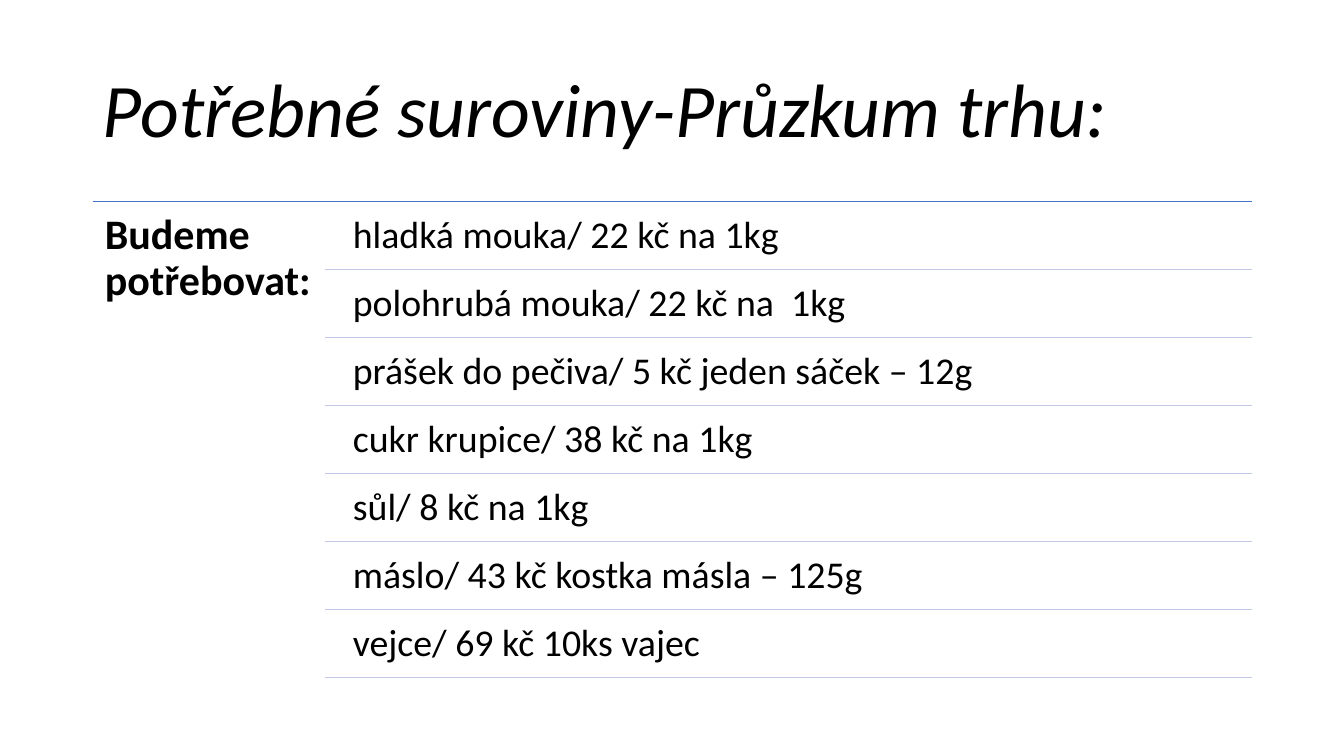
import pptx
import pptx.dml.color
import pptx.enum.shapes
import pptx.enum.text
import pptx.oxml.ns
import pptx.util
from lxml import etree

Inches = pptx.util.Inches
Pt = pptx.util.Pt

BLACK = pptx.dml.color.RGBColor(0x00, 0x00, 0x00)
WHITE = pptx.dml.color.RGBColor(0xFF, 0xFF, 0xFF)
BLUE = pptx.dml.color.RGBColor(0x44, 0x72, 0xC4)
PALE_BLUE = pptx.dml.color.RGBColor(0xC1, 0xC9, 0xE4)
FONT = "Calibri"

INGREDIENTS = [
    "hladká mouka/ 22 kč na 1kg",
    "polohrubá mouka/ 22 kč na  1kg",
    "prášek do pečiva/ 5 kč jeden sáček – 12g",
    "cukr krupice/ 38 kč na 1kg",
    "sůl/ 8 kč na 1kg",
    "máslo/ 43 kč kostka másla – 125g",
    "vejce/ 69 kč 10ks vajec",
]


def write(frame, text, size, bold=False, italic=False):
    frame.word_wrap = True
    frame.auto_size = pptx.enum.text.MSO_AUTO_SIZE.NONE
    paragraph = frame.paragraphs[0]
    paragraph.alignment = pptx.enum.text.PP_ALIGN.LEFT
    paragraph.line_spacing = 0.9
    run = paragraph.add_run()
    run.text = text
    run.font.name = FONT
    run.font.size = Pt(size)
    run.font.bold = bold
    run.font.italic = italic
    run.font.color.rgb = BLACK


def add_label(shapes, left, top, width, height, inset, text, size, bold=False):
    label = shapes.add_textbox(Inches(left), Inches(top), Inches(width), Inches(height))
    frame = label.text_frame
    frame.margin_left = frame.margin_right = Inches(inset)
    frame.margin_top = frame.margin_bottom = Inches(inset)
    write(frame, text, size, bold)


def add_rule(shapes, left, right, y, color):
    rule = shapes.add_connector(pptx.enum.shapes.MSO_CONNECTOR.STRAIGHT,
                                Inches(left), Inches(y), Inches(right), Inches(y))
    rule.line.color.rgb = color
    rule.line.width = Pt(1)
    etree.SubElement(rule._element.spPr, pptx.oxml.ns.qn("a:effectLst"))


def add_title(slide, left, top, width, height):
    title = slide.shapes.title
    title.left, title.top = Inches(left), Inches(top)
    title.width, title.height = Inches(width), Inches(height)
    title.text_frame.vertical_anchor = pptx.enum.text.MSO_ANCHOR.MIDDLE
    write(title.text_frame, "Potřebné suroviny-Průzkum trhu:", 54, italic=True)


def add_shopping_list(slide, left, top, width, height):
    shapes = slide.shapes.add_group_shape().shapes
    right = left + width
    heading_width = width / 5
    gap = 0.03
    row_pitch = (height - gap) / len(INGREDIENTS)

    # Heading column under the top rule
    add_rule(shapes, left, right, top, BLUE)
    add_label(shapes, left, top, heading_width, height, 0.12,
              "Budeme potřebovat:", 30, bold=True)

    # One ruled row for each ingredient
    rows_left = left + heading_width
    text_left = rows_left + 0.17
    for index, ingredient in enumerate(INGREDIENTS):
        row_top = top + gap + index * row_pitch
        add_label(shapes, text_left, row_top, right - text_left, row_pitch - gap,
                  0.11, ingredient, 27)
        add_rule(shapes, rows_left, right, row_top + row_pitch - gap, PALE_BLUE)


def main():
    deck = pptx.Presentation()
    deck.slide_width = Inches(13.33)
    deck.slide_height = Inches(7.5)
    slide = deck.slides.add_slide(deck.slide_layouts[5])
    slide.background.fill.solid()
    slide.background.fill.fore_color.rgb = WHITE
    add_title(slide, 0.92, 0.4, 11.5, 1.45)
    add_shopping_list(slide, 0.92, 2, 11.5, 4.75)
    deck.save("out.pptx")


if __name__ == "__main__":
    main()
